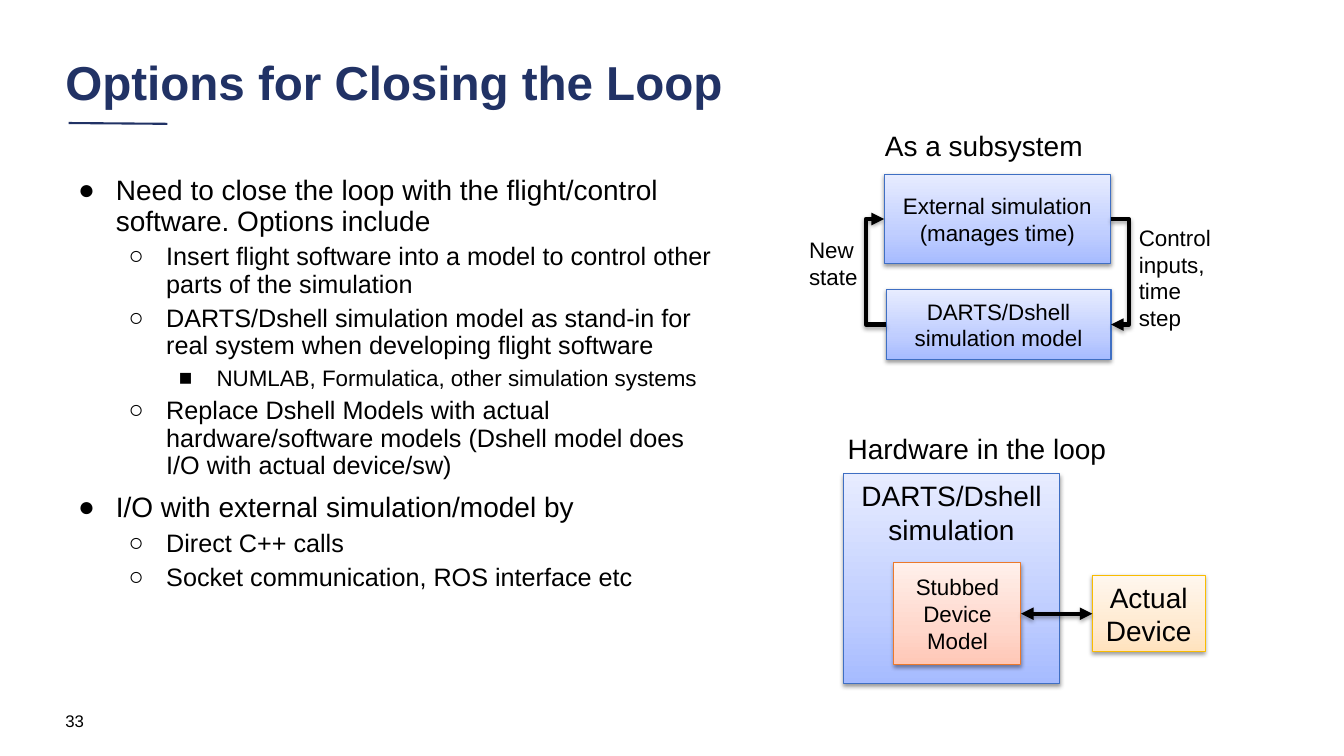
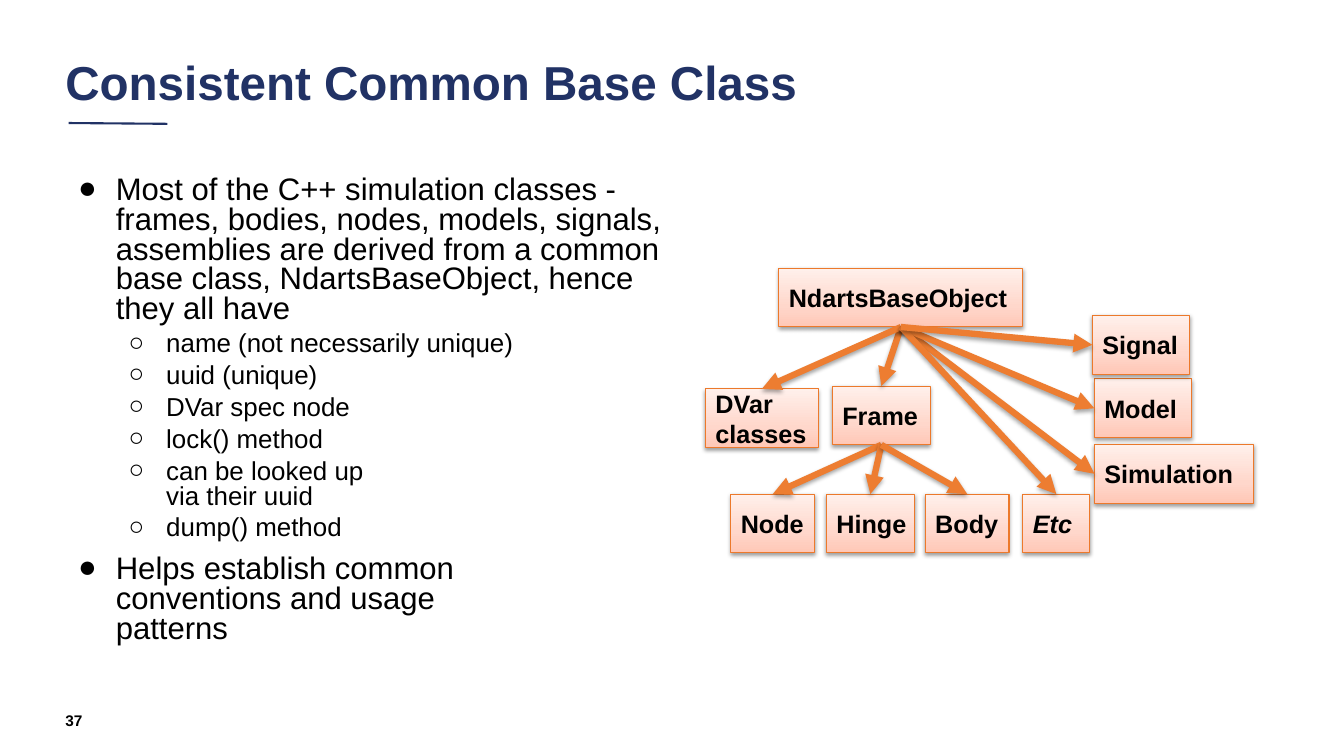
"""Build two slides on closing a simulation loop and on a common base class."""
from pptx import Presentation, oxml
from pptx import util as u
from pptx.dml.color import RGBColor
from pptx.enum import shapes, text
from pptx.oxml import ns

Cm = u.Cm


class Theme:
    font = "Arial"
    ink = "000000"
    navy = "213265"
    orange = "ED7D31"
    blue_box = ("A6BBFF", "C0CEFF", "E7ECFF", "3F6FC3")
    peach_box = ("FFC7B6", "FFD7CB", "FFF0EB", "EC792B")
    gold_box = ("FFE2BD", "FFEAD1", "FFF7EE", "F9BC00")
    title, heading, node, label = 34, 20, 18, 16
    bullets = "●○■"
    space_before = (10, 5, 5)
    box_shadow = (1.6, 38)
    line_shadow = (1.8, 35)


TOP, LEFT, BOTTOM, RIGHT = range(4)

LOOP = {
    "title": "Options for Closing the Loop",
    "page": ("33", 12, False),
    "body": (17.04, 12.9, 0.9, (20, 18, 16)),
    "points": [
        (0, "Need to close the loop with the flight/control software. Options include"),
        (1, "Insert flight software into a model to control other parts of the simulation"),
        (1, "DARTS/Dshell simulation model as stand-in for real system when developing flight software"),
        (2, "NUMLAB, Formulatica, other simulation systems"),
        (1, "Replace Dshell Models with actual hardware/software models (Dshell model does I/O with actual device/sw)"),
        (0, "I/O with external simulation/model by"),
        (1, "Direct C++ calls"),
        (1, "Socket communication, ROS interface etc"),
    ],
}
LOOP_BOXES = {
    "model": (["DARTS/Dshell simulation model"], (22.33, 7.29, 5.67, 1.78), Theme.blue_box, Theme.label, "MIDDLE"),
    "external": (["External simulation", "(manages time)"], (22.28, 4.39, 5.71, 2.26), Theme.blue_box, Theme.label, "MIDDLE"),
    "hardware": (["DARTS/Dshell simulation"], (21.26, 11.94, 5.44, 5.28), Theme.blue_box, Theme.heading, "TOP"),
    "device": (["Actual Device"], (27.53, 14.5, 2.84, 1.93), Theme.gold_box, Theme.heading, "MIDDLE"),
    "stub": (["Stubbed Device Model"], (22.53, 14.18, 3.2, 2.57), Theme.peach_box, Theme.label, "MIDDLE"),
}
LOOP_LABELS = [
    (["As a subsystem"], (22.05, 3.1, 5.54, 1.12), Theme.heading, False),
    (["Hardware in the loop"], (21.11, 10.74, 7.09, 1.12), Theme.heading, False),
    (["Control inputs, time step"], (28.45, 5.51, 2.44, 3), Theme.label, True),
    (["New", "state"], (20.14, 5.82, 1.91, 1.63), Theme.label, True),
]

CLASSES = {
    "title": "Consistent Common Base Class",
    "page": ("37", 11, True),
    "body": (16.51, 13.56, 0.8, (22.2, 18.5)),
    "points": [
        (0, "Most of the C++ simulation classes - frames, bodies, nodes, models, signals, "
            "assemblies are derived from a common base class, NdartsBaseObject, hence they all have"),
        (1, "name (not necessarily unique)"),
        (1, "uuid (unique)"),
        (1, "DVar spec node"),
        (1, "lock() method"),
        (1, "can be looked up\nvia their uuid"),
        (1, "dump() method"),
        (0, "Helps establish common\nconventions and usage\npatterns"),
    ],
}
CLASS_HEIGHT = 1.48
CLASS_ROW = 12.45
CLASS_BOXES = {
    "NdartsBaseObject": (19.63, 6.76, 6.15),
    "DVar classes": (17.78, 9.8, 2.84),
    "Frame": (20.98, 9.73, 2.46),
    "Node": (18.42, CLASS_ROW, 2.11),
    "Hinge": (20.83, CLASS_ROW, 2.21),
    "Body": (23.32, CLASS_ROW, 2.11),
    "Etc": (25.78, CLASS_ROW, 1.68),
    "Simulation": (27.58, 11.2, 4.01),
    "Model": (27.58, 9.55, 2.46),
    "Signal": (27.53, 7.95, 2.46),
}
CLASS_TREE = {
    "NdartsBaseObject": [("Frame", TOP), ("DVar classes", TOP), ("Simulation", LEFT),
                         ("Model", LEFT), ("Etc", TOP), ("Signal", LEFT)],
    "Frame": [("Node", TOP), ("Hinge", TOP), ("Body", TOP)],
}


def rgb(code):
    return RGBColor.from_string(code)


def element(xml):
    tag, rest = xml[1:].split(maxsplit=1)
    return oxml.parse_xml(f"<{tag} {ns.nsdecls('a')} {rest}")


def place(at):
    return [Cm(value) for value in at]


def write(frame, lines, size, color=Theme.ink, bold=False, italic=False, align="LEFT",
          anchor="TOP", wrap=True, spacing=None):
    """Fill a text frame with one paragraph a line and return the paragraphs."""
    frame.word_wrap = wrap
    frame.vertical_anchor = text.MSO_ANCHOR[anchor]
    frame.margin_left = frame.margin_right = Cm(0.25)
    frame.margin_top = frame.margin_bottom = Cm(0.13)
    for number, line in enumerate(lines):
        para = frame.add_paragraph() if number else frame.paragraphs[0]
        para.text = line
        para.alignment = text.PP_ALIGN[align]
        para.line_spacing = spacing
        for span in para.runs:
            font = span.font
            font.name, font.size, font.bold, font.italic = Theme.font, u.Pt(size), bold, italic
            font.color.rgb = rgb(color)
    return frame.paragraphs


def add_text(page, lines, at, size, **style):
    box = page.shapes.add_textbox(*place(at))
    return write(box.text_frame, lines, size, **style)


def add_shadow(props, distance, alpha):
    props.append(element(
        f'<a:effectLst ><a:outerShdw blurRad="{u.Pt(3.1)}" dist="{u.Pt(distance)}" dir="5400000" '
        f'rotWithShape="0"><a:srgbClr val="{Theme.ink}"><a:alpha val="{alpha * 1000}"/>'
        '</a:srgbClr></a:outerShdw></a:effectLst>'))


def add_box(page, lines, at, colors, size, **style):
    box = page.shapes.add_shape(shapes.MSO_SHAPE.RECTANGLE, *place(at))
    props = box._element.spPr
    stops = "".join(f'<a:gs pos="{spot * 1000}"><a:srgbClr val="{color}"/></a:gs>'
                    for spot, color in zip((0, 35, 100), colors))
    props.append(element(f'<a:gradFill rotWithShape="1"><a:gsLst>{stops}</a:gsLst>'
                         '<a:lin ang="16200000" scaled="0"/></a:gradFill>'))
    box.line.color.rgb = rgb(colors[-1])
    box.line.width = u.Pt(0.75)
    add_shadow(props, *Theme.box_shadow)
    write(box.text_frame, lines, size, **style)
    return box


def add_arrow(page, start, end, color, width, heads=("tailEnd",), via=None):
    """Join two (box, side) ends, turning at the given x if there is one."""
    kind = shapes.MSO_CONNECTOR.STRAIGHT if via is None else shapes.MSO_CONNECTOR.ELBOW
    arrow = page.shapes.add_connector(kind, 0, 0, 0, 0)
    arrow.begin_connect(*start)
    arrow.end_connect(*end)
    arrow.line.color.rgb = rgb(color)
    arrow.line.width = u.Pt(width)
    props = arrow._element.spPr
    for head in heads:
        props.find(ns.qn("a:ln")).append(element(f'<a:{head} type="triangle"/>'))
    if via is not None:
        turn = round((Cm(via) - arrow.begin_x) / (arrow.end_x - arrow.begin_x) * 100000)
        guides = props.find(ns.qn("a:prstGeom")).get_or_add_avLst()
        guides.append(element(f'<a:gd name="adj1" fmla="val {turn}"/>'))
    add_shadow(props, *Theme.line_shadow)


def add_points(page, points, width, height, spacing, sizes):
    box = page.shapes.add_textbox(*place((1.4, 4.32, width, height)))
    paras = write(box.text_frame, [line for _, line in points], sizes[0], spacing=spacing)
    for number, (para, (level, _)) in enumerate(zip(paras, points)):
        para.level = level
        para.space_before = u.Pt(Theme.space_before[level] if number else 0)
        props = para._p.get_or_add_pPr()
        props.set("marL", str(Cm(1.27 * (level + 1))))
        props.set("indent", str(Cm(-0.95)))
        for xml in (f'<a:buClr ><a:srgbClr val="{Theme.ink}"/></a:buClr>',
                    f'<a:buFont typeface="{Theme.font}"/>',
                    f'<a:buChar char="{Theme.bullets[level]}"/>'):
            props.append(element(xml))
        for span in para.runs:
            span.font.size = u.Pt(sizes[level])


def add_page(deck, content):
    page = deck.slides.add_slide(deck.slide_layouts[6])
    rule = page.shapes.add_connector(shapes.MSO_CONNECTOR.STRAIGHT, *place((1.73, 3.1, 4.22, 3.12)))
    rule.line.color.rgb = rgb(Theme.navy)
    rule.line.width = u.Pt(1.5)
    rule._element.spPr.append(element("<a:effectLst />"))
    number, size, bold = content["page"]
    add_text(page, [number], (1.4, 17.65, 7.62, 1.02), size, bold=bold, anchor="MIDDLE")
    add_text(page, [content["title"]], (1.4, 1.17, 28.24, 1.93), Theme.title,
             color=Theme.navy, bold=True, anchor="MIDDLE", spacing=0.9)
    add_points(page, content["points"], *content["body"])
    return page


def draw_loop(page):
    boxes = {name: add_box(page, lines, at, colors, size, align="CENTER", anchor=anchor)
             for name, (lines, at, colors, size, anchor) in LOOP_BOXES.items()}
    for lines, at, size, wrap in LOOP_LABELS:
        add_text(page, lines, at, size, wrap=wrap)
    for start, start_side, end, end_side, heads, via in (
            ("external", RIGHT, "model", RIGHT, ("tailEnd",), 28.45),
            ("external", LEFT, "model", LEFT, ("headEnd",), 21.82),
            ("stub", RIGHT, "device", LEFT, ("headEnd", "tailEnd"), None)):
        add_arrow(page, (boxes[start], start_side), (boxes[end], end_side), Theme.ink, 3, heads, via)


def draw_classes(page):
    boxes = {name: add_box(page, name.split(), (left, top, width, CLASS_HEIGHT), Theme.peach_box,
                           Theme.node, bold=True, italic=name == "Etc", anchor="MIDDLE", wrap=False)
             for name, (left, top, width) in CLASS_BOXES.items()}
    for parent, children in CLASS_TREE.items():
        for child, side in children:
            add_arrow(page, (boxes[parent], BOTTOM), (boxes[child], side), Theme.orange, 4.5)


def main():
    deck = Presentation()
    deck.slide_width, deck.slide_height = Cm(33.87), Cm(19.05)
    draw_loop(add_page(deck, LOOP))
    draw_classes(add_page(deck, CLASSES))
    deck.save("out.pptx")


if __name__ == "__main__":
    main()
